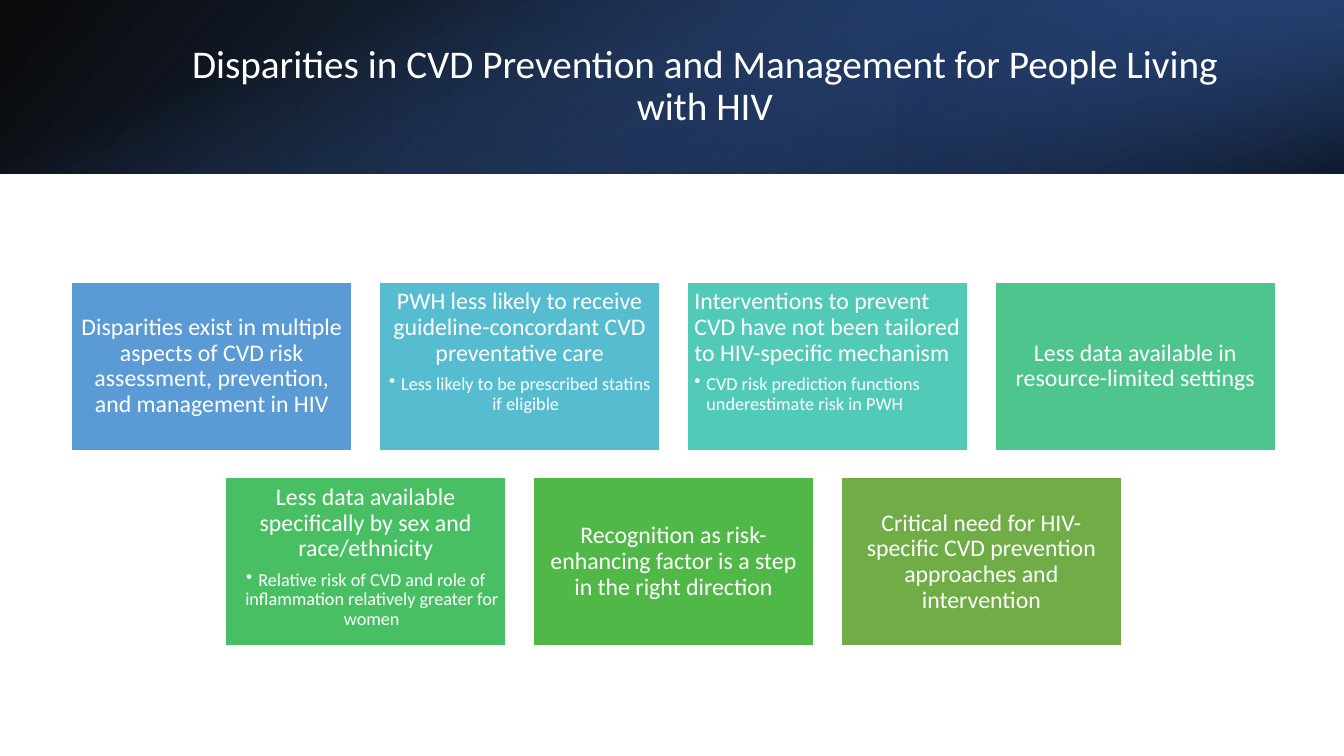
from dataclasses import dataclass

from lxml.etree import SubElement
from pptx import Presentation
from pptx.dml.color import RGBColor
from pptx.enum.shapes import MSO_SHAPE as Shape
from pptx.enum.text import MSO_ANCHOR as Anchor, MSO_AUTO_SIZE as AutoSize, PP_ALIGN as Align
from pptx.oxml.ns import qn
from pptx.util import Inches, Pt

COLORS = {
    "white": "FFFFFF",
    "black": "000000",
    "navy": "203864",
    "royal": "2F5597",
    "bright": "4472C4",
    "blue": "5B9BD5",
    "cyan": "56BCD0",
    "turquoise": "52CAB8",
    "mint": "4DC58D",
    "emerald": "49BF64",
    "green": "50B846",
    "olive": "70AD47",
}
FONT = "Calibri"
SLIDE_W, SLIDE_H, BANNER_H = 13.33, 7.5, 1.72
FIRST_X, LAST_X, FIRST_Y = 0.71, 9.87, 2.8
CARD_W, CARD_H, ROW_PITCH = 2.78, 1.67, 1.94
COLUMNS = 4
PITCH = (LAST_X - FIRST_X) / (COLUMNS - 1)


@dataclass
class Stop:
    position: float
    color: str
    opacity: int


@dataclass
class Shade:
    left: float
    top: float
    width: float
    height: float
    angle: int
    stops: tuple[Stop, Stop]
    rotation: int = 0
    flipped: bool = False


@dataclass
class Card:
    color: str
    heading: str
    detail: str = ""
    align: Align = Align.CENTER


SHADES = [
    Shade(0, 0, SLIDE_W, BANNER_H, 140,
          (Stop(0, "black", 96), Stop(1, "royal", 100)), flipped=True),
    Shade(8.89, 0, 4.44, BANNER_H, 320,
          (Stop(0.19, "navy", 68), Stop(1, "bright", 79)), rotation=180, flipped=True),
    Shade((SLIDE_W - BANNER_H) / 2, (BANNER_H - SLIDE_W) / 2, BANNER_H, SLIDE_W, 340,
          (Stop(0.23, "bright", 0), Stop(0.99, "black", 74)), rotation=90),
]
CARDS = [
    Card("blue", "Disparities exist in multiple aspects of CVD risk assessment, "
                 "prevention, and management in HIV"),
    Card("cyan", "PWH less likely to receive guideline-concordant CVD preventative care",
         "Less likely to be prescribed statins if eligible"),
    Card("turquoise", "Interventions to prevent CVD have not been tailored to HIV-specific mechanism",
         "CVD risk prediction functions underestimate risk in PWH", Align.LEFT),
    Card("mint", "Less data available in resource-limited settings"),
    Card("emerald", "Less data available specifically by sex and race/ethnicity",
         "Relative risk of CVD and role of inflammation relatively greater for women"),
    Card("green", "Recognition as risk-enhancing factor is a step in the right direction"),
    Card("olive", "Critical need for HIV-specific CVD prevention approaches and intervention"),
]


def rgb(name: str) -> RGBColor:
    return RGBColor.from_string(COLORS[name])


def add_rectangle(s, left: float, top: float, width: float, height: float):
    sp = s.shapes.add_shape(Shape.RECTANGLE, Inches(left), Inches(top), Inches(width), Inches(height))
    sp.shadow.inherit = False
    return sp


def add_shade(s, shade: Shade) -> None:
    sp = add_rectangle(s, shade.left, shade.top, shade.width, shade.height)
    sp.rotation = shade.rotation
    sp.line.fill.background()
    if shade.flipped:
        sp._element.spPr.xfrm.set("flipH", "1")
    sp.fill.gradient()
    sp.fill.gradient_angle = 360 - shade.angle
    for target, stop in zip(sp.fill.gradient_stops, shade.stops):
        target.position = stop.position
        target.color.rgb = rgb(stop.color)
    for color, stop in zip(sp._element.spPr.iter(qn("a:srgbClr")), shade.stops):
        SubElement(color, qn("a:alpha")).set("val", str(stop.opacity * 1000))


def format_paragraph(p, text: str, size: int, align: Align, after: int = 0) -> None:
    p.text = text
    p.alignment = align
    p.line_spacing = 0.9
    p.space_before = Pt(0)
    p.space_after = Pt(after)
    p.font.name = FONT
    p.font.size = Pt(size)
    p.font.color.rgb = rgb("white")


def add_bullet(p) -> None:
    p.level = 1
    pPr = p._p.get_or_add_pPr()
    pPr.set("marL", str(Inches(0.12)))
    pPr.set("indent", str(-Inches(0.12)))
    bullet = pPr.makeelement(qn("a:buChar"), {"char": "•"})
    pPr.insert_element_before(bullet, "a:tabLst", "a:defRPr", "a:extLst")


def add_card(s, card: Card, left: float, top: float) -> None:
    sp = add_rectangle(s, left, top, CARD_W, CARD_H)
    sp.fill.solid()
    sp.fill.fore_color.rgb = rgb(card.color)
    sp.line.color.rgb = rgb("white")
    sp.line.width = Pt(1)
    tf = sp.text_frame
    tf.word_wrap = True
    tf.margin_left = tf.margin_right = tf.margin_top = tf.margin_bottom = Inches(0.07)
    tf.vertical_anchor = Anchor.TOP if card.detail else Anchor.MIDDLE
    format_paragraph(tf.paragraphs[0], card.heading, 17, card.align, 6)
    if card.detail:
        p = tf.add_paragraph()
        format_paragraph(p, card.detail, 13, card.align, 2)
        add_bullet(p)


def place_title(s) -> None:
    title = s.shapes.title
    title.left, title.top = Inches(1.5), Inches(0.38)
    title.width, title.height = Inches(10.98), Inches(0.96)
    tf = title.text_frame
    tf.word_wrap = True
    tf.auto_size = AutoSize.NONE
    tf.vertical_anchor = Anchor.MIDDLE
    format_paragraph(tf.paragraphs[0],
                     "Disparities in CVD Prevention and Management for People Living with HIV",
                     28, Align.CENTER)
    s.shapes._spTree.append(title._element)


def main() -> None:
    prs = Presentation()
    prs.slide_width, prs.slide_height = Inches(SLIDE_W), Inches(SLIDE_H)
    s = prs.slides.add_slide(prs.slide_layouts[5])
    for shade in SHADES:
        add_shade(s, shade)
    place_title(s)
    for i, card in enumerate(CARDS):
        row, column = divmod(i, COLUMNS)
        add_card(s, card, FIRST_X + (column + row / 2) * PITCH, FIRST_Y + row * ROW_PITCH)
    prs.save("out.pptx")


if __name__ == "__main__":
    main()
